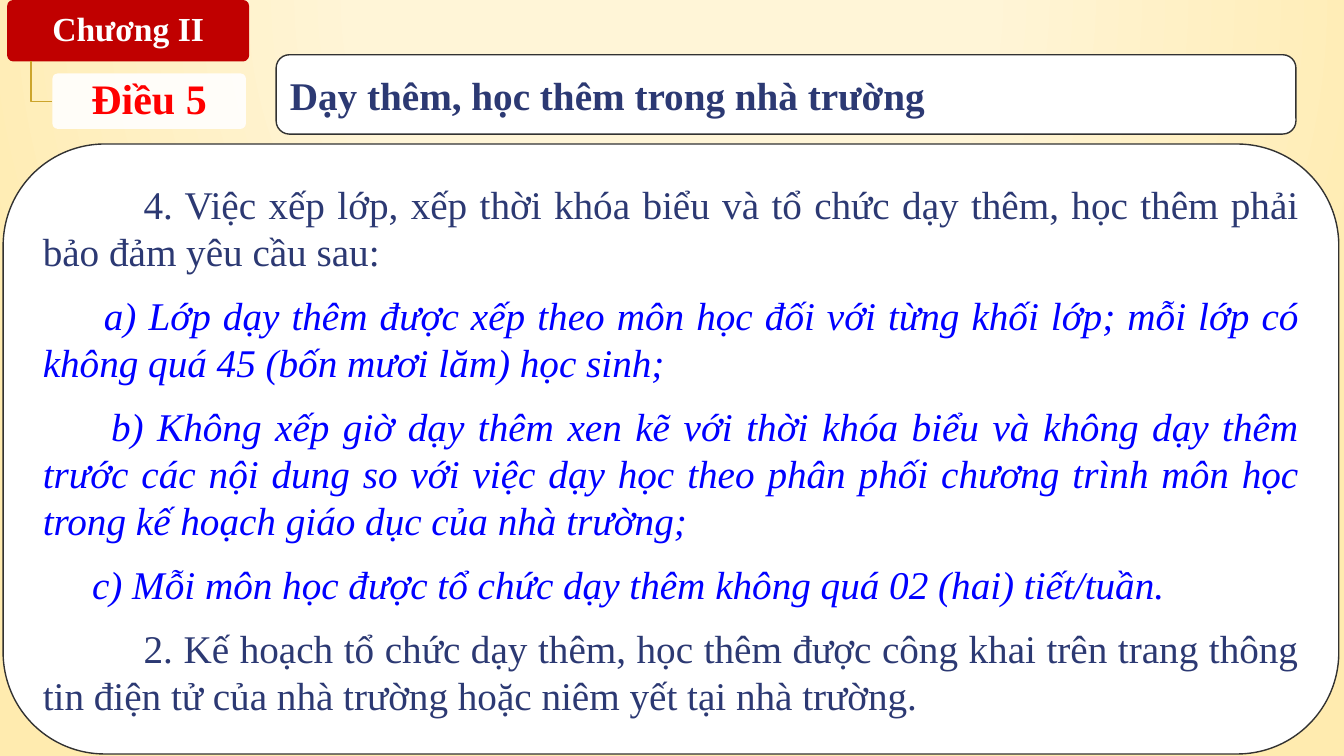
"""Build a slide on the rules for extra classes held inside schools."""
from pptx import Presentation
from pptx.dml.color import RGBColor
from pptx.enum.shapes import MSO_SHAPE
from pptx.enum.text import MSO_ANCHOR, PP_ALIGN
from pptx.oxml import parse_xml
from pptx.oxml.ns import nsdecls, qn
from pptx.util import Cm, Pt

ROUNDED = MSO_SHAPE.ROUNDED_RECTANGLE
MIDDLE = MSO_ANCHOR.MIDDLE
LEFT, CENTER, JUSTIFY = PP_ALIGN.LEFT, PP_ALIGN.CENTER, PP_ALIGN.JUSTIFY
FONT = "Times New Roman"
COLORS = {
    "white": "FFFFFF", "chapter": "C00000", "article": "FF0000",
    "navy": "2C3973", "blue": "0000FF", "outline": "323232", "gold": "CCA42B",
}
BACKGROUND_STOPS = [(0, "FFF5D7"), (40, "FFF5D7"), (100, "FFEBAF")]
RULES = [
    ("4. Việc xếp lớp, xếp thời khóa biểu và tổ chức dạy thêm, học thêm phải "
     "bảo đảm yêu cầu sau:", "navy", False, 2.54),
    ("a) Lớp dạy thêm được xếp theo môn học đối với từng khối lớp; mỗi lớp có "
     "không quá 45 (bốn mươi lăm) học sinh;", "blue", True, 1.54),
    ("b) Không xếp giờ dạy thêm xen kẽ với thời khóa biểu và không dạy thêm "
     "trước các nội dung so với việc dạy học theo phân phối chương trình môn học "
     "trong kế hoạch giáo dục của nhà trường;", "blue", True, 1.72),
    ("c) Mỗi môn học được tổ chức dạy thêm không quá 02 (hai) tiết/tuần.",
     "blue", True, 1.24),
    ("2. Kế hoạch tổ chức dạy thêm, học thêm được công khai trên trang thông "
     "tin điện tử của nhà trường hoặc niêm yết tại nhà trường.", "navy", False, 2.54),
]


def color(name):
    return RGBColor.from_string(COLORS[name])


def paint_background(slide):
    slide.background.fill.gradient()
    gradient = slide.element.find(".//" + qn("a:gradFill"))
    stops = "".join(
        f'<a:gs pos="{position * 1000}"><a:srgbClr val="{value}"/></a:gs>'
        for position, value in BACKGROUND_STOPS)
    gradient.getparent().replace(gradient, parse_xml(
        f'<a:gradFill {nsdecls("a")} rotWithShape="1"><a:gsLst>{stops}</a:gsLst>'
        '<a:path path="circle"><a:fillToRect l="50000" t="-80000" r="50000" '
        'b="180000"/></a:path></a:gradFill>'))


def add_panel(slide, box, fill, outline=None, corner=None):
    shape = slide.shapes.add_shape(ROUNDED, *map(Cm, box))
    shape.shadow.inherit = False
    shape.fill.solid()
    shape.fill.fore_color.rgb = color(fill)
    if outline:
        shape.line.color.rgb = color(outline)
        shape.line.width = Pt(1)
    else:
        shape.line.fill.background()
    if corner is not None:
        shape.adjustments[0] = corner
    shape.text_frame.vertical_anchor = MIDDLE
    shape.text_frame.word_wrap = True
    return shape


def format_paragraph(paragraph, size, text_color, alignment, bold=False, italic=False):
    paragraph.alignment = alignment
    for run in paragraph.runs:
        font = run.font
        font.name, font.size = FONT, Pt(size)
        font.bold, font.italic = bold, italic
        font.color.rgb = color(text_color)


def add_label(slide, box, text, size, fill, text_color):
    label = add_panel(slide, box, fill, corner=0.1)
    frame = label.text_frame
    frame.margin_left = frame.margin_right = Cm(0.15)
    frame.margin_top = frame.margin_bottom = Cm(0.1)
    frame.text = text
    frame.paragraphs[0].line_spacing = 0.9
    format_paragraph(frame.paragraphs[0], size, text_color, CENTER, bold=True)
    return label


def set_opacity(shape, percent):
    value = shape.fill._xPr.find(qn("a:solidFill"))[0]
    value.append(parse_xml(f'<a:alpha {nsdecls("a")} val="{percent * 1000}"/>'))


def add_elbow(slide, points):
    start, *corners = [(Cm(x), Cm(y)) for x, y in points]
    builder = slide.shapes.build_freeform(*start)
    builder.add_line_segments(corners, close=False)
    elbow = builder.convert_to_shape()
    elbow.shadow.inherit = False
    elbow.fill.background()
    elbow.line.color.rgb = color("gold")
    elbow.line.width = Pt(1)


def add_title(slide, box, text):
    frame = add_panel(slide, box, "white", "outline").text_frame
    frame.text = text
    format_paragraph(frame.paragraphs[0], 28, "navy", LEFT, bold=True)


def add_rules(slide, box):
    frame = add_panel(slide, box, "white", "outline").text_frame
    frame.text = "\n".join(rule[0] for rule in RULES)
    for paragraph, (_, text_color, italic, indent) in zip(frame.paragraphs, RULES):
        format_paragraph(paragraph, 28, text_color, JUSTIFY, italic=italic)
        paragraph.space_before = paragraph.space_after = Pt(6)
        properties = paragraph._p.get_or_add_pPr()
        properties.set("marL", "0")
        properties.set("indent", str(Cm(indent)))


def main():
    presentation = Presentation()
    presentation.slide_width, presentation.slide_height = Cm(33.87), Cm(19.05)
    slide = presentation.slides.add_slide(presentation.slide_layouts[6])
    paint_background(slide)
    add_label(slide, (0.18, 0, 6.1, 1.55), "Chương II", 24, "chapter", "white")
    add_elbow(slide, [(0.78, 1.55), (0.78, 2.56), (1.32, 2.56)])
    article = add_label(slide, (1.32, 1.85, 4.88, 1.4), "Điều 5", 30, "white", "article")
    set_opacity(article, 90)
    add_rules(slide, (0.08, 3.63, 33.66, 15.37))
    add_title(slide, (6.96, 1.38, 25.7, 2), "Dạy thêm, học thêm trong nhà trường")
    presentation.save("out.pptx")


if __name__ == "__main__":
    main()
